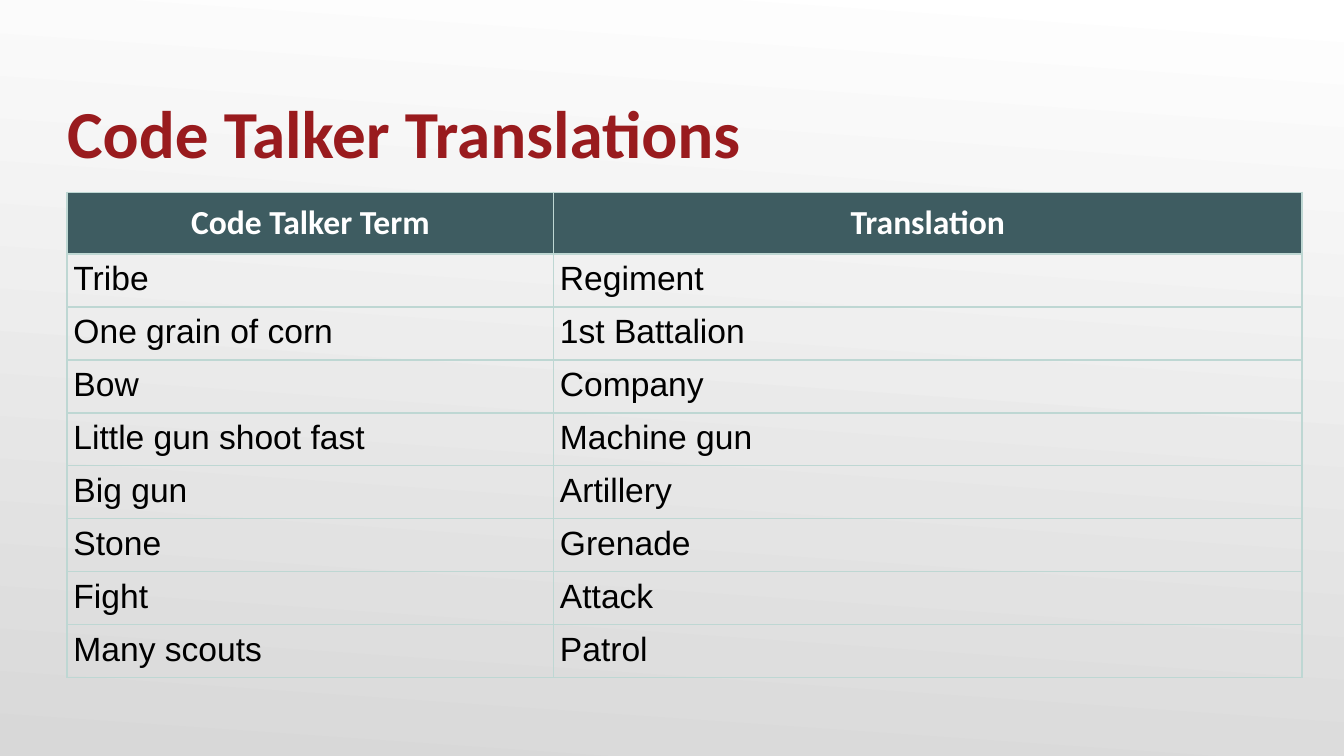
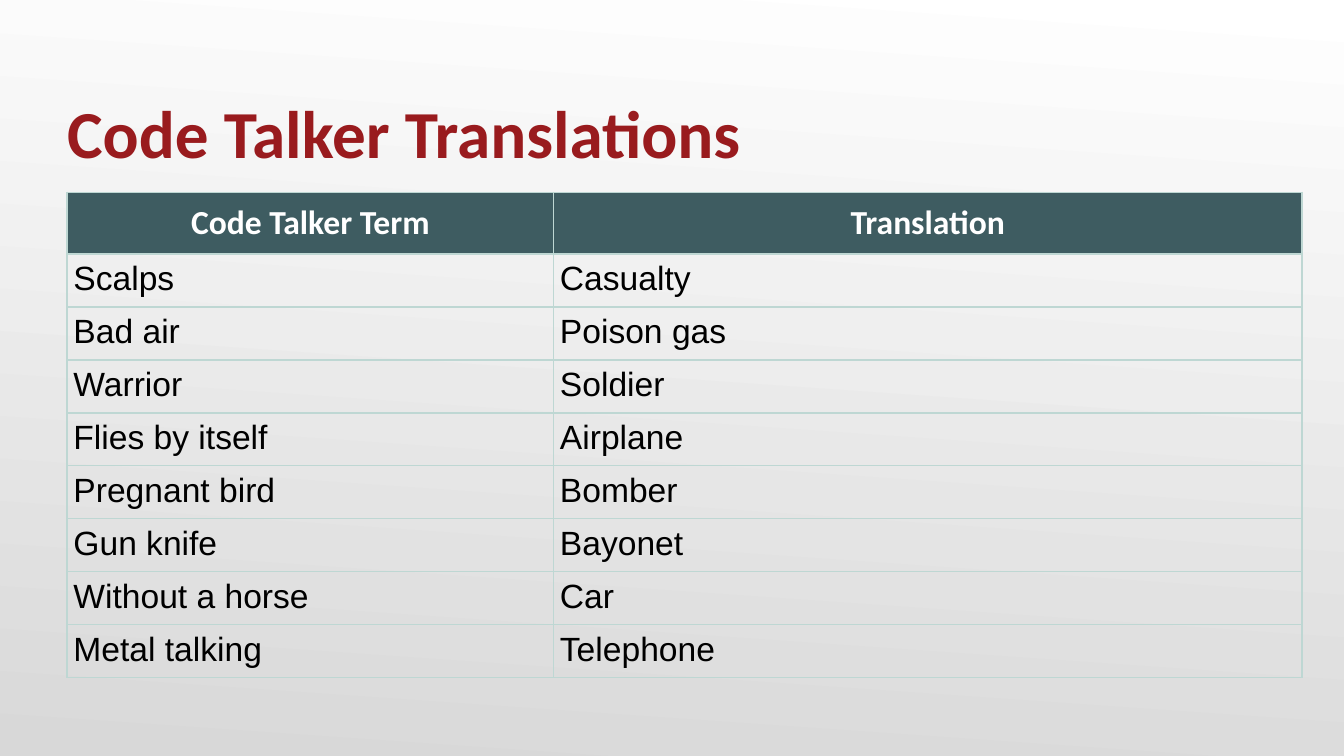
from dataclasses import dataclass

from lxml import etree
from pptx import Presentation
from pptx import util as u
from pptx.dml.color import RGBColor
from pptx.enum import text
from pptx.oxml import ns

PX = 4762.5
WIDTH, HEIGHT = 1920, 1080
LEFT = 96
COLORS = {
    "title": "991B1E",
    "header": "3E5C61",
    "header_text": "FFFFFF",
    "body_text": "000000",
    "border": "BED7D3",
    "bg_top": "FFFFFF",
    "bg_bottom": "D8D8D8",
}
TITLE = "Code Talker Translations"
HEADER = ("Code Talker Term", "Translation")
COL_WIDTHS = (695, 1069)
ROW_HEIGHT = 48
TABLE_TOP, TABLE_HEIGHT = 275, 703
HEADER_INSET, BODY_INSET = 15, 9


@dataclass(frozen=True)
class TermSlide:
    """Title width and term pairs of one slide."""

    title_width: int
    pairs: tuple[tuple[str, str], ...]


SLIDES = (
    TermSlide(1039, (
        ("Tribe", "Regiment"),
        ("One grain of corn", "1st Battalion"),
        ("Bow", "Company"),
        ("Little gun shoot fast", "Machine gun"),
        ("Big gun", "Artillery"),
        ("Stone", "Grenade"),
        ("Fight", "Attack"),
        ("Many scouts", "Patrol"),
    )),
    TermSlide(1008, (
        ("Scalps", "Casualty"),
        ("Bad air", "Poison gas"),
        ("Warrior", "Soldier"),
        ("Flies by itself", "Airplane"),
        ("Pregnant bird", "Bomber"),
        ("Gun knife", "Bayonet"),
        ("Without a horse", "Car"),
        ("Metal talking", "Telephone"),
    )),
)


def px(n: int) -> u.Emu:
    """Turn pixels into EMU."""
    return u.Emu(round(n * PX))


def rgb(name: str) -> RGBColor:
    """Look up a named colour."""
    return RGBColor.from_string(COLORS[name])


def put_text(tf, value: str, *, color: str, font: str = "Calibri", size: int = 18,
             bold: bool = True, align=text.PP_ALIGN.LEFT) -> None:
    """Write one formatted paragraph into a text frame."""
    p = tf.paragraphs[0]
    p.alignment = align
    r = p.add_run()
    r.text = value
    r.font.name, r.font.size, r.font.bold = font, u.Pt(size), bold
    r.font.color.rgb = rgb(color)


def set_insets(box, left: int, top: int, right: int, bottom: int) -> None:
    """Set the margins of a cell or text frame."""
    box.margin_left, box.margin_top = px(left), px(top)
    box.margin_right, box.margin_bottom = px(right), px(bottom)


def add_borders(cell) -> None:
    """Draw a thin line on all four sides of a cell."""
    tc_pr = cell._tc.get_or_add_tcPr()
    for side in ("lnL", "lnR", "lnT", "lnB"):
        ln = etree.SubElement(tc_pr, ns.qn(f"a:{side}"), w=str(u.Pt(1)))
        fill = etree.SubElement(ln, ns.qn("a:solidFill"))
        etree.SubElement(fill, ns.qn("a:srgbClr"), val=COLORS["border"])


def fill_background(s) -> None:
    """Give a slide its grey gradient."""
    fill = s.background.fill
    fill.gradient()
    fill.gradient_angle = 266
    for stop, name in zip(fill.gradient_stops, ("bg_top", "bg_bottom")):
        stop.color.rgb = rgb(name)


def add_title(s, width: int) -> None:
    """Add the slide title."""
    sp = s.shapes.add_textbox(px(LEFT), px(65), px(width), px(180))
    tf = sp.text_frame
    tf.word_wrap = True
    tf.vertical_anchor = text.MSO_ANCHOR.BOTTOM
    set_insets(tf, 0, 10, 0, 0)
    put_text(tf, TITLE, color="title", size=36)


def fill_cell(cell, value: str, is_header: bool) -> None:
    """Format one table cell and write its text."""
    set_insets(cell, *[HEADER_INSET if is_header else BODY_INSET] * 4)
    add_borders(cell)
    if is_header:
        cell.fill.solid()
        cell.fill.fore_color.rgb = rgb("header")
        put_text(cell.text_frame, value, color="header_text",
                 align=text.PP_ALIGN.CENTER)
    else:
        cell.fill.background()
        put_text(cell.text_frame, value, color="body_text", font="Arial", bold=False)


def add_terms(s, pairs: tuple[tuple[str, str], ...]) -> None:
    """Add the table of terms and translations."""
    rows = (HEADER, *pairs)
    sp = s.shapes.add_table(len(rows), len(HEADER), px(LEFT), px(TABLE_TOP),
                            px(sum(COL_WIDTHS)), px(TABLE_HEIGHT))
    table = sp.table
    table.horz_banding = False
    for col, width in zip(table.columns, COL_WIDTHS):
        col.width = px(width)
    for i, values in enumerate(rows):
        table.rows[i].height = px(ROW_HEIGHT)
        for j, value in enumerate(values):
            fill_cell(table.cell(i, j), value, i == 0)
    sp.height = px(TABLE_HEIGHT)


def main() -> None:
    """Build and save the presentation."""
    prs = Presentation()
    prs.slide_width, prs.slide_height = px(WIDTH), px(HEIGHT)
    for item in SLIDES:
        s = prs.slides.add_slide(prs.slide_layouts[6])
        fill_background(s)
        add_title(s, item.title_width)
        add_terms(s, item.pairs)
    prs.save("out.pptx")


if __name__ == "__main__":
    main()
